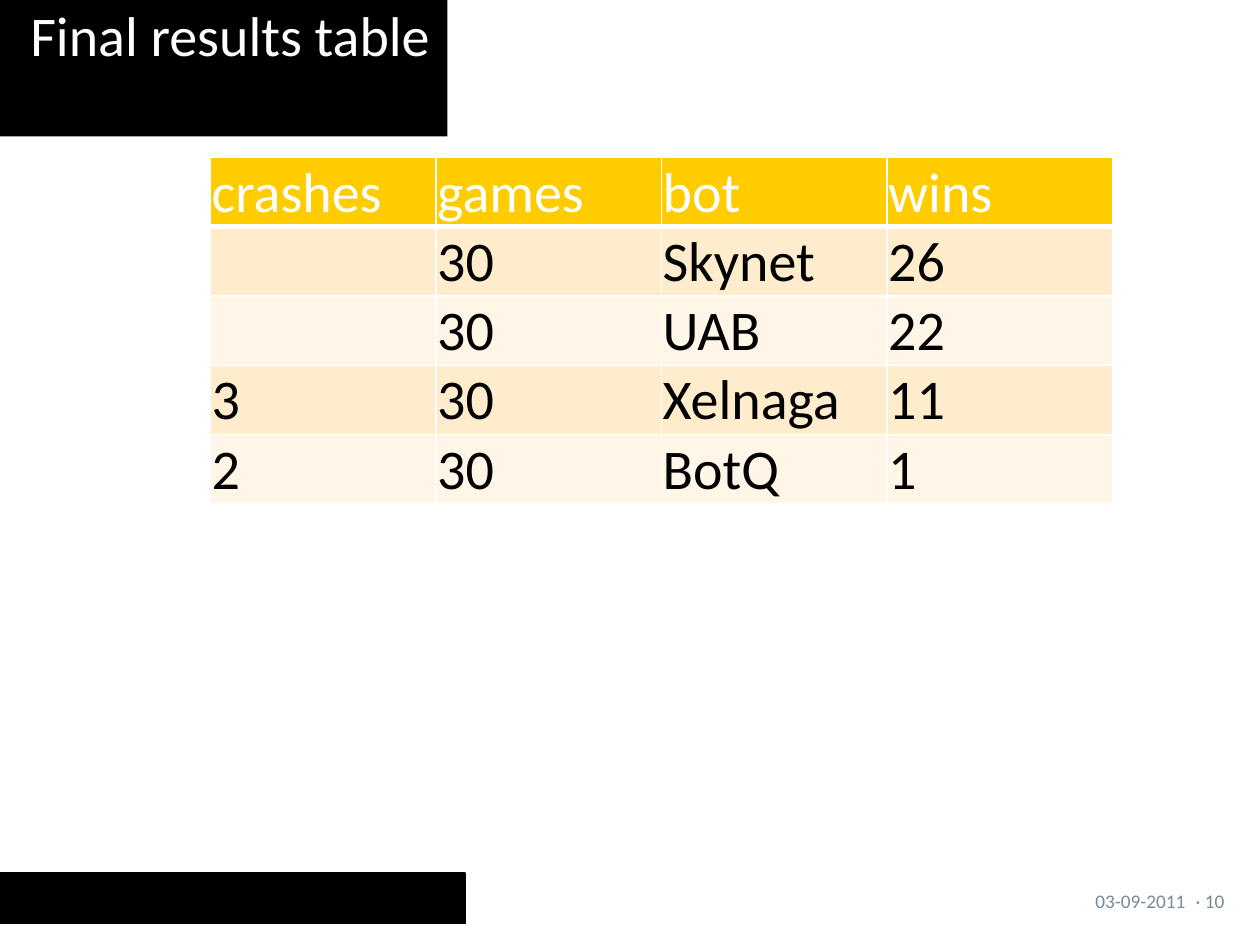
"""Build the final results table slide."""
from dataclasses import dataclass

import pptx
import pptx.dml.color
import pptx.enum.shapes
import pptx.enum.text
import pptx.oxml
import pptx.oxml.ns
import pptx.util
from pptx.dml.color import RGBColor
from pptx.util import Inches

BLACK = RGBColor(0x00, 0x00, 0x00)
WHITE = RGBColor(0xFF, 0xFF, 0xFF)
GREY = RGBColor(0x77, 0x8A, 0x95)
GOLD = RGBColor(0xFF, 0xCC, 0x00)
BANDS = (RGBColor(0xFF, 0xF6, 0xE7), RGBColor(0xFF, 0xEC, 0xCC))
MIDDLE = pptx.enum.text.MSO_ANCHOR.MIDDLE
LEFT = pptx.enum.text.PP_ALIGN.LEFT
RIGHT = pptx.enum.text.PP_ALIGN.RIGHT

RESULTS = (
    ("crashes", "games", "bot", "wins"),
    ("", "30", "Skynet", "26"),
    ("", "30", "UAB", "22"),
    ("3", "30", "Xelnaga", "11"),
    ("2", "30", "BotQ", "1"),
)
COLUMN_WIDTH = 1.79
ROW_HEIGHT = 0.55


@dataclass
class FooterText:
    text: str
    left: float
    width: float
    alignment: pptx.enum.text.PP_ALIGN


FOOTER = (
    FooterText("03-09-2011", 7.08, 2.33, RIGHT),
    FooterText("· 10", 9.49, 0.33, LEFT),
)


def write_text(frame, text: str, size: int, color: RGBColor, alignment=LEFT) -> None:
    frame.text = text
    paragraph = frame.paragraphs[0]
    paragraph.alignment = alignment
    for font in [paragraph.font] + [run.font for run in paragraph.runs]:
        font.name = "Calibri"
        font.size = pptx.util.Pt(size)
        font.color.rgb = color


def set_margins(frame, left: float, top: float, right: float, bottom: float) -> None:
    frame.margin_left, frame.margin_top = Inches(left), Inches(top)
    frame.margin_right, frame.margin_bottom = Inches(right), Inches(bottom)


def add_title(slide) -> None:
    title = slide.shapes.title
    title.left, title.top = Inches(0), Inches(0)
    title.width, title.height = Inches(3.55), Inches(0.62)
    title.fill.solid()
    title.fill.fore_color.rgb = BLACK
    frame = title.text_frame
    write_text(frame, "Final results table", 32, WHITE)
    set_margins(frame, 0.24, 0, 0.1, 0.08)
    frame.vertical_anchor = MIDDLE
    frame.word_wrap = False
    frame.auto_size = pptx.enum.text.MSO_AUTO_SIZE.SHAPE_TO_FIT_TEXT


def add_footer_bar(slide) -> None:
    bar = slide.shapes.add_shape(
        pptx.enum.shapes.MSO_SHAPE.RECTANGLE,
        Inches(0), Inches(6.93), Inches(3.69), Inches(0.4),
    )
    bar.shadow.inherit = False
    bar.fill.solid()
    bar.fill.fore_color.rgb = BLACK
    bar.line.color.rgb = BLACK
    bar.line.width = pptx.util.Pt(1)


def add_footer_text(slide, item: FooterText) -> None:
    box = slide.shapes.add_textbox(
        Inches(item.left), Inches(6.95), Inches(item.width), Inches(0.4)
    )
    frame = box.text_frame
    frame.word_wrap = True
    frame.vertical_anchor = MIDDLE
    set_margins(frame, 0, 0, 0, 0)
    write_text(frame, item.text, 11, GREY, item.alignment)


def add_borders(cell, bottom_points: int) -> None:
    properties = cell._tc.get_or_add_tcPr()
    for side, points in (("L", 1), ("R", 1), ("T", 1), ("B", bottom_points)):
        properties.append(pptx.oxml.parse_xml(
            f'<a:ln{side} {pptx.oxml.ns.nsdecls("a")} w="{pptx.util.Pt(points)}">'
            f'<a:solidFill><a:srgbClr val="{WHITE}"/></a:solidFill></a:ln{side}>'
        ))


def add_results_table(slide) -> None:
    rows, columns = len(RESULTS), len(RESULTS[0])
    table = slide.shapes.add_table(
        rows, columns, Inches(1.67), Inches(1.25),
        Inches(COLUMN_WIDTH * columns), Inches(ROW_HEIGHT * rows),
    ).table
    for row_index, values in enumerate(RESULTS):
        header = row_index == 0
        for column_index, value in enumerate(values):
            cell = table.cell(row_index, column_index)
            add_borders(cell, 3 if header else 1)
            cell.fill.solid()
            cell.fill.fore_color.rgb = GOLD if header else BANDS[row_index % 2]
            cell.vertical_anchor = pptx.enum.text.MSO_ANCHOR.BOTTOM
            set_margins(cell, 0.01, 0.01, 0.01, 0)
            write_text(cell.text_frame, value, 32, WHITE if header else BLACK)


def main() -> None:
    presentation = pptx.Presentation()
    presentation.slide_width = Inches(10)
    presentation.slide_height = Inches(7.5)
    slide = presentation.slides.add_slide(presentation.slide_layouts[5])
    add_footer_bar(slide)
    add_title(slide)
    for item in FOOTER:
        add_footer_text(slide, item)
    add_results_table(slide)
    presentation.save("out.pptx")


if __name__ == "__main__":
    main()
